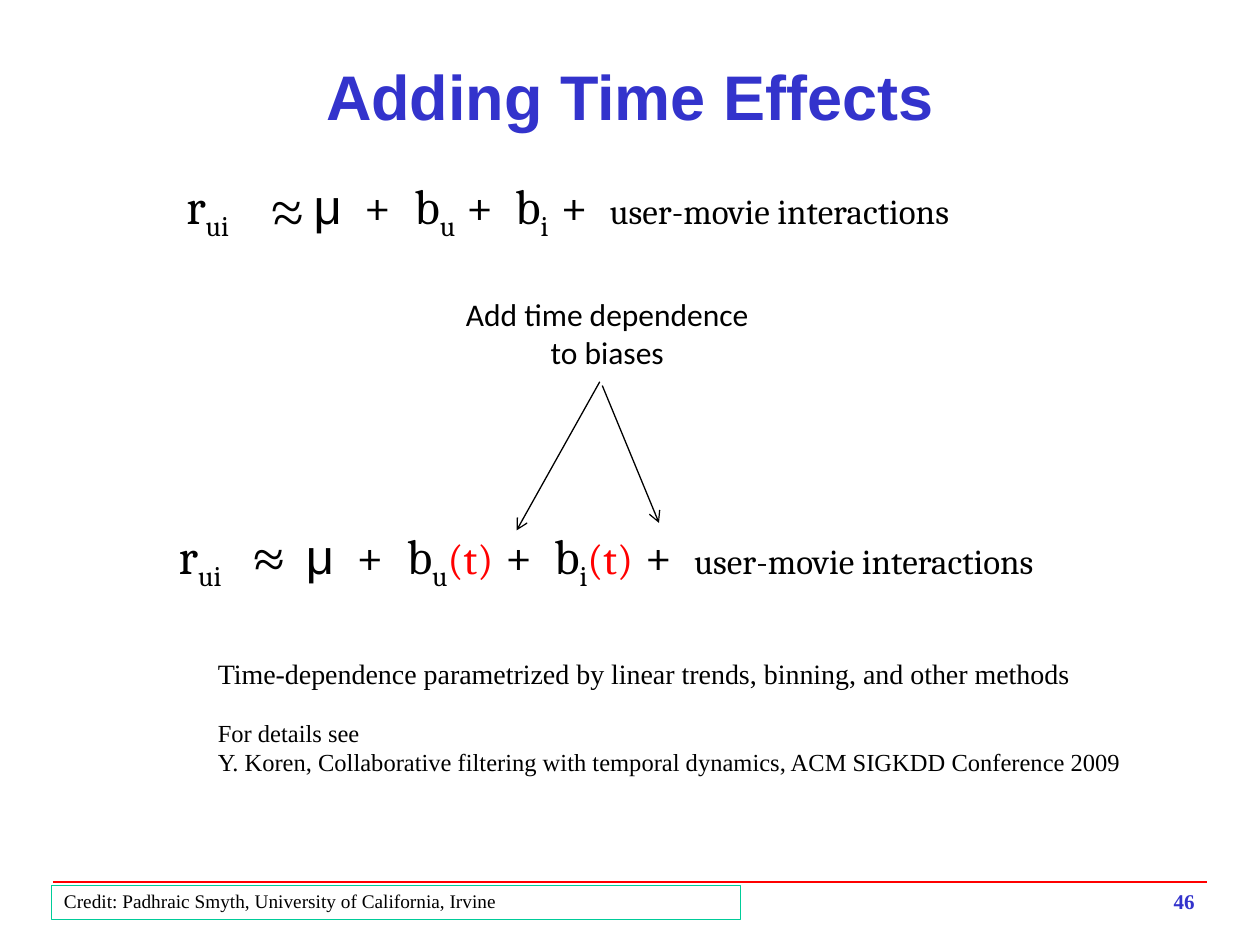
from dataclasses import dataclass

from lxml import etree
from pptx import Presentation
from pptx.dml.color import RGBColor
from pptx.enum.shapes import MSO_CONNECTOR, MSO_SHAPE
from pptx.enum.text import MSO_ANCHOR, PP_ALIGN
from pptx.oxml.ns import qn
from pptx.util import Inches, Pt

LEFT, CENTER, RIGHT = PP_ALIGN.LEFT, PP_ALIGN.CENTER, PP_ALIGN.RIGHT
TOP, MIDDLE = MSO_ANCHOR.TOP, MSO_ANCHOR.MIDDLE
LINE = MSO_CONNECTOR.STRAIGHT
RECT = MSO_SHAPE.RECTANGLE


@dataclass(frozen=True)
class Theme:
    black: str = "000000"
    blue: str = "3333CC"
    red: str = "FF0000"
    green: str = "00CC99"
    sans: str = "Arial"
    serif: str = "Times New Roman"
    math: str = "Cambria"
    label: str = "Calibri"
    title: int = 36
    wave: int = 32
    term: int = 28
    time: int = 24
    tail: int = 20
    note: int = 18
    body: int = 16
    cite: int = 14
    page: int = 12
    credit: int = 11


T = Theme()


@dataclass(frozen=True)
class Span:
    text: str
    size: int
    font: str = T.serif
    color: str = T.black
    bold: bool = False
    sub: bool = False


@dataclass(frozen=True)
class Para:
    spans: tuple
    align: PP_ALIGN = LEFT
    indent: float = 0
    before: float = 0
    pitch: float = 1
    stops: tuple = ()


@dataclass(frozen=True)
class Box:
    left: float
    top: float
    width: float
    height: float
    paras: tuple
    anchor: MSO_ANCHOR = TOP


@dataclass(frozen=True)
class Link:
    start: tuple
    end: tuple
    color: str
    width: float
    arrow: bool = False


@dataclass(frozen=True)
class Model:
    left: float
    top: float
    width: float
    waves: tuple
    wave_x: float
    timed: bool
    stops: tuple


def add_para(para, item: Para) -> None:
    para.alignment = item.align
    para.line_spacing = item.pitch
    para.space_before = Pt(item.before)
    props = para._p.get_or_add_pPr()
    if item.indent:
        props.set("marL", str(Inches(item.indent)))
        props.set("indent", "0")
    if item.stops:
        tabs = etree.SubElement(props, qn("a:tabLst"))
        for stop in item.stops:
            etree.SubElement(tabs, qn("a:tab"), pos=str(Inches(stop)), algn="l")
    for span in item.spans:
        run = para.add_run()
        run.text = span.text
        run.font.size = Pt(span.size)
        run.font.name = span.font
        run.font.bold = span.bold
        run.font.color.rgb = RGBColor.from_string(span.color)
        if span.sub:
            run._r.get_or_add_rPr().set("baseline", "-25000")


def fill_text(shape, box: Box) -> None:
    frame = shape.text_frame
    frame.word_wrap = True
    frame.vertical_anchor = box.anchor
    for i, item in enumerate(box.paras):
        add_para(frame.add_paragraph() if i else frame.paragraphs[0], item)


def area(box: Box) -> tuple:
    return tuple(Inches(n) for n in (box.left, box.top, box.width, box.height))


def add_text(slide, box: Box) -> None:
    fill_text(slide.shapes.add_textbox(*area(box)), box)


def add_frame(slide, box: Box, color: str) -> None:
    shape = slide.shapes.add_shape(RECT, *area(box))
    shape.shadow.inherit = False
    shape.fill.background()
    shape.line.color.rgb = RGBColor.from_string(color)
    shape.line.width = Pt(0.75)
    fill_text(shape, box)


def add_link(slide, link: Link) -> None:
    ends = (Inches(n) for n in link.start + link.end)
    line = slide.shapes.add_connector(LINE, *ends)
    line.line.color.rgb = RGBColor.from_string(link.color)
    line.line.width = Pt(link.width)
    if link.arrow:
        etree.SubElement(line.line._get_or_add_ln(), qn("a:tailEnd"), type="arrow")
    etree.SubElement(line._element.spPr, qn("a:effectLst"))


def term(text: str) -> Span:
    return Span(text, T.term, T.math)


def low(text: str) -> Span:
    return Span(text, T.term, T.math, sub=True)


def add_model(slide, model: Model) -> None:
    time = (Span("(t)", T.time, T.math, T.red),) if model.timed else ()
    spans = (term("r"), low("ui"), term("\t"), Span("μ", T.term, T.sans),
             term("\t+\tb"), low("u"), *time,
             term("\t+\tb"), low("i"), *time,
             term("\t+\t"), Span("user-movie interactions", T.tail, T.math))
    add_text(slide, Box(model.left, model.top, model.width, 0.64,
                        (Para(spans, stops=model.stops),)))
    for x, y in zip((model.wave_x, model.wave_x + 0.01), model.waves):
        add_text(slide, Box(x, y, 0.68, 0.64, (Para((Span("~", T.wave),)),)))


MODELS = (
    Model(1.38, 1.34, 8.05, (1.3, 1.4), 2.06, False,
          (1.01, 1.41, 1.81, 2.22, 2.61, 2.97, 3.36)),
    Model(1.32, 4.12, 8.68, (4.06, 4.14), 1.91, True,
          (1.01, 1.41, 1.81, 2.59, 2.98, 3.7, 4.09)),
)
TEXTS = (
    Box(0.5, 0.42, 9, 0.67, (Para((
        Span("Adding Time Effects", T.title, T.sans, T.blue, True),), CENTER),), MIDDLE),
    Box(3.57, 2.29, 2.5, 0.71, (Para((
        Span("Add time dependence to biases", T.note, T.label),), CENTER),)),
    Box(1.13, 5.16, 8.01, 1.08, (
        Para((Span("Time-dependence parametrized by linear trends, binning, "
                   "and other methods", T.body),), indent=0.5),
        Para((Span("For details see", T.cite),), indent=0.5, before=16),
        Para((Span("Y. Koren, Collaborative filtering with temporal dynamics, "
                   "ACM SIGKDD Conference 2009", T.cite),), indent=0.5))),
    Box(7.5, 7, 2.08, 0.33, (Para((
        Span("46", T.page, color=T.blue, bold=True),), RIGHT),)),
)
LINKS = (
    Link((0.42, 7), (9.58, 7), T.red, 1),
    Link((4.76, 3.03), (4.1, 4.21), T.black, 0.75, True),
    Link((4.78, 3.06), (5.23, 4.15), T.black, 0.75, True),
)
CREDIT = Box(0.41, 7.03, 5.47, 0.27, (Para((
    Span("Credit: Padhraic Smyth, University of California, Irvine", T.credit),),
    pitch=0.9),))


def main() -> None:
    deck = Presentation()
    deck.slide_width, deck.slide_height = Inches(10), Inches(7.5)
    slide = deck.slides.add_slide(deck.slide_layouts[6])
    for link in LINKS:
        add_link(slide, link)
    for model in MODELS:
        add_model(slide, model)
    for box in TEXTS:
        add_text(slide, box)
    add_frame(slide, CREDIT, T.green)
    deck.save("out.pptx")


if __name__ == "__main__":
    main()
